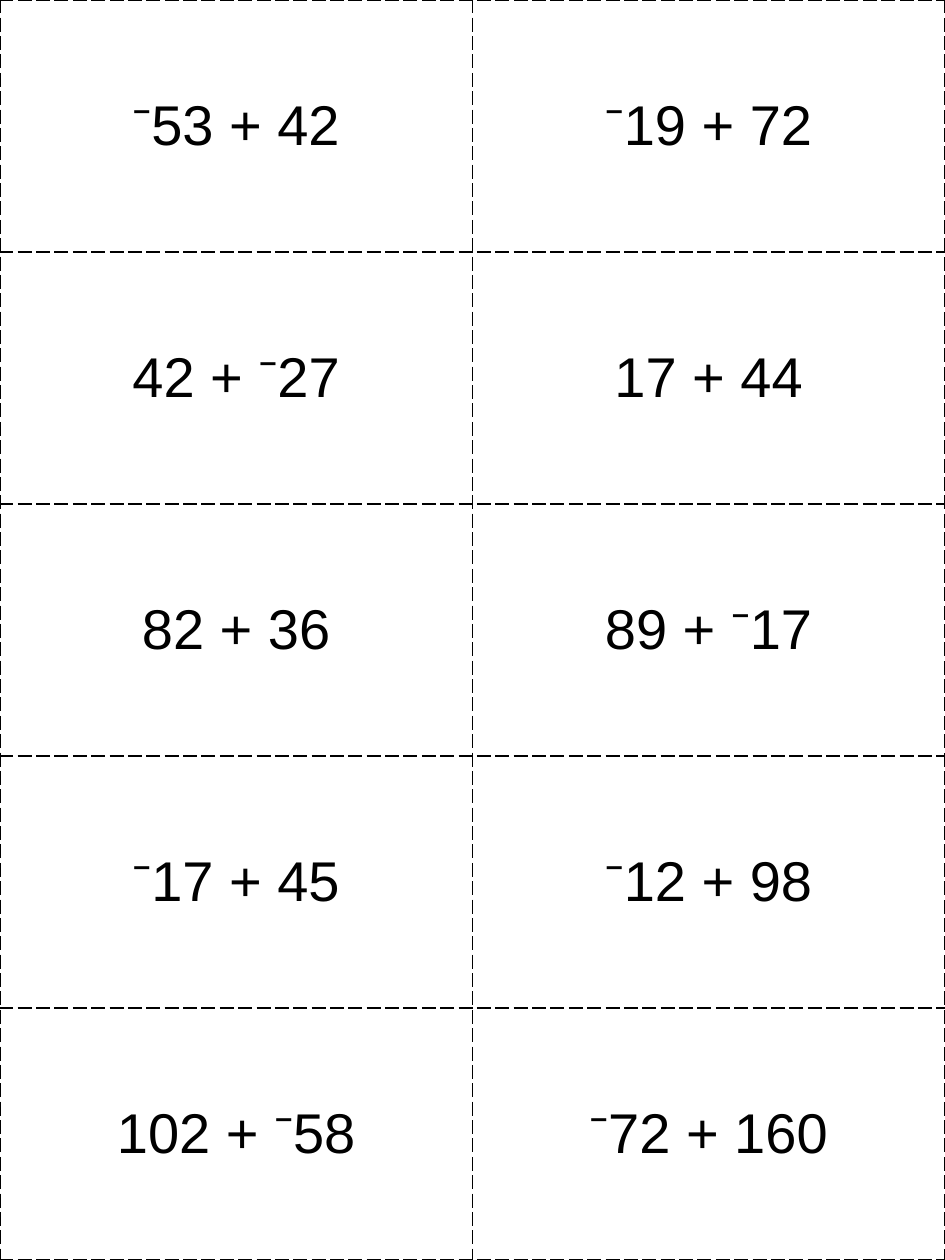
from lxml import etree
from pptx import Presentation
from pptx import util as u
from pptx.dml.color import RGBColor
from pptx.enum import text
from pptx.oxml import ns

PX = u.Inches(1) // 126
WIDTH, HEIGHT = 945 * PX, 1260 * PX
THEME = {"ink": "000000", "font": "Arial", "sum_size": 32, "cut_width": 1}

SUMS = [
    ("⁻53 + 42", "⁻19 + 72"),
    ("42 + ⁻27", "17 + 44"),
    ("82 + 36", "89 + ⁻17"),
    ("⁻17 + 45", "⁻12 + 98"),
    ("102 + ⁻58", "⁻72 + 160"),
]


def write(card, words, *, size, color, font, align):
    card.vertical_anchor = text.MSO_ANCHOR.MIDDLE
    line = card.text_frame.paragraphs[0]
    line.alignment = align
    run = line.add_run()
    run.text = words
    run.font.size = u.Pt(size)
    run.font.name = font
    run.font.color.rgb = RGBColor.from_string(color)


def add_cut_lines(card, *, color, width, dash):
    properties = card._tc.get_or_add_tcPr()
    for side in ("lnL", "lnR", "lnT", "lnB"):
        edge = etree.SubElement(properties, ns.qn(f"a:{side}"), w=str(u.Pt(width)))
        ink = etree.SubElement(edge, ns.qn("a:solidFill"))
        etree.SubElement(ink, ns.qn("a:srgbClr"), val=color)
        etree.SubElement(edge, ns.qn("a:prstDash"), val=dash)


deck = Presentation()
deck.slide_width, deck.slide_height = WIDTH, HEIGHT
slide = deck.slides.add_slide(deck.slide_layouts[6])

cards = slide.shapes.add_table(len(SUMS), len(SUMS[0]), 0, 0, WIDTH, HEIGHT).table
cards.first_row = False
cards.horz_banding = False

for row, pair in enumerate(SUMS):
    for column, words in enumerate(pair):
        card = cards.cell(row, column)
        write(card, words, size=THEME["sum_size"], color=THEME["ink"],
              font=THEME["font"], align=text.PP_ALIGN.CENTER)
        add_cut_lines(card, color=THEME["ink"], width=THEME["cut_width"], dash="lgDash")
        card.fill.background()

deck.save("out.pptx")
